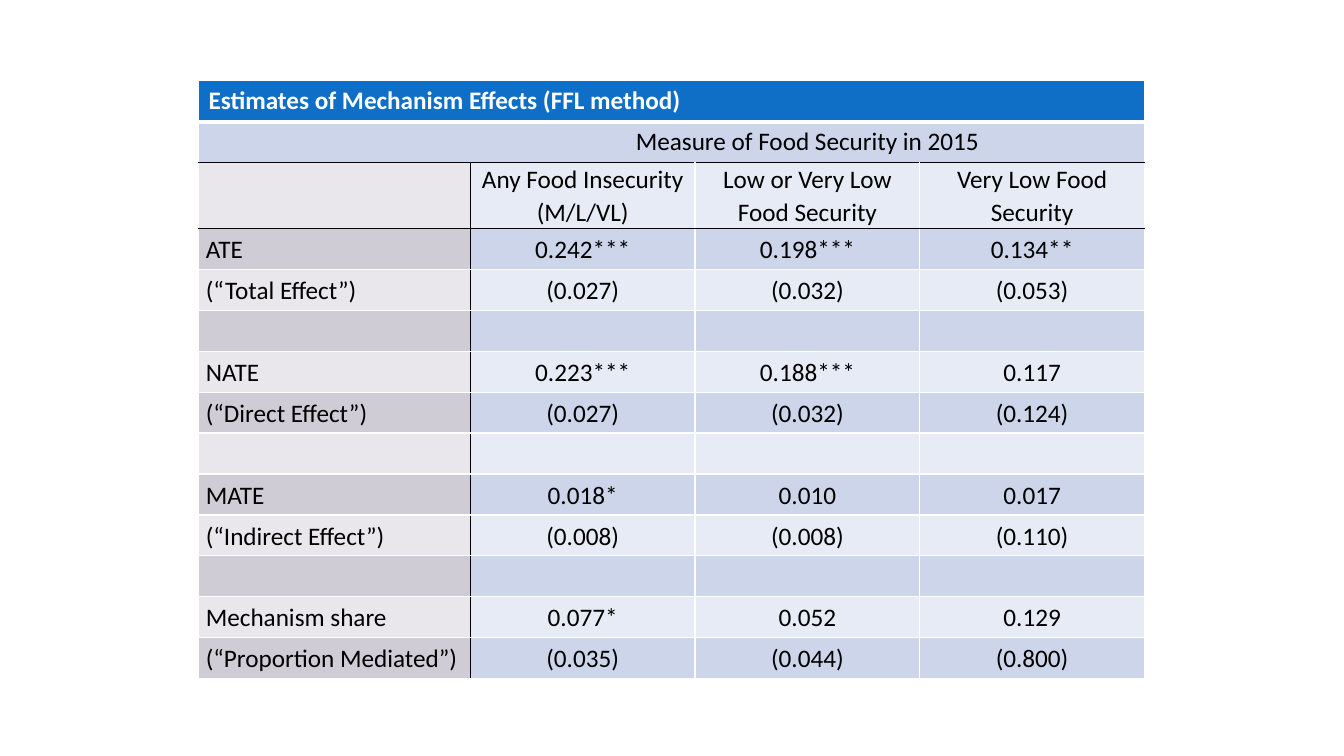
from lxml import etree
from pptx import Presentation
from pptx.dml.color import RGBColor
from pptx.enum.text import MSO_ANCHOR, PP_ALIGN
from pptx.oxml.ns import qn
from pptx.util import Pt

TITLE = "Estimates of Mechanism Effects (FFL method)"
ROWS = [
    (TITLE, "", "", ""),
    ("", "Measure of Food Security in 2015", "", ""),
    ("", "Any Food Insecurity\v(M/L/VL)", "Low or Very Low Food Security",
     "Very Low Food Security"),
    ("ATE", "0.242***", "0.198***", "0.134**"),
    ("(“Total Effect”)", "(0.027)", "(0.032)", "(0.053)"),
    ("", "", "", ""),
    ("NATE", "0.223***", "0.188***", "0.117"),
    ("(“Direct Effect”)", "(0.027)", "(0.032)", "(0.124)"),
    ("", "", "", ""),
    ("MATE", "0.018*", "0.010", "0.017"),
    ("(“Indirect Effect”)", "(0.008)", "(0.008)", "(0.110)"),
    ("", "", "", ""),
    ("Mechanism share", "0.077*", "0.052", "0.129"),
    ("(“Proportion Mediated”)", "(0.035)", "(0.044)", "(0.800)"),
]
TITLE_ROW, MEASURE_ROW, HEADER_ROW = 0, 1, 2

# Lengths in px
PX = 9525
SLIDE_WIDTH, SLIDE_HEIGHT = 1280, 720
LEFT, TOP = 189, 77
COLUMN_WIDTHS = [259, 214, 214, 214]
ROW_HEIGHT, HEADER_HEIGHT = 39, 62
SIDE_MARGIN = 7

FONT = "Calibri"
WHITE = RGBColor(0xFF, 0xFF, 0xFF)
BLACK = RGBColor(0x00, 0x00, 0x00)
TITLE_BLUE = RGBColor(0x0F, 0x6F, 0xC6)
VALUE_BANDS = [RGBColor(0xE7, 0xEB, 0xF5), RGBColor(0xCC, 0xD5, 0xEA)]
LABEL_BANDS = [RGBColor(0xE9, 0xE7, 0xEC), RGBColor(0xD0, 0xCC, 0xD6)]
CENTER = PP_ALIGN.CENTER
TOP_ANCHOR, MIDDLE, BOTTOM = MSO_ANCHOR.TOP, MSO_ANCHOR.MIDDLE, MSO_ANCHOR.BOTTOM


def fill_color(row, column):
    if row == TITLE_ROW:
        return TITLE_BLUE
    bands = LABEL_BANDS if column == 0 and row >= HEADER_ROW else VALUE_BANDS
    return bands[row % 2]


def rule_below(row):
    """Colour and width of the line under a row."""
    if row == TITLE_ROW:
        return WHITE, 3
    return (BLACK if row in (MEASURE_ROW, HEADER_ROW) else WHITE), 1


def rule_right(row, column):
    """Colour and width of the line right of a column."""
    if row == MEASURE_ROW and column == 0:
        return None, 0
    return (BLACK if column == 0 and row >= HEADER_ROW else WHITE), 1


def set_borders(cell, row, column):
    rules = {
        "a:lnL": rule_right(row, column - 1),
        "a:lnR": rule_right(row, column),
        "a:lnT": rule_below(row - 1),
        "a:lnB": rule_below(row),
    }
    properties = cell._tc.get_or_add_tcPr()
    for tag, (color, width) in rules.items():
        line = etree.SubElement(properties, qn(tag), w=str(Pt(width)))
        if color is None:
            etree.SubElement(line, qn("a:noFill"))
        else:
            solid = etree.SubElement(line, qn("a:solidFill"))
            etree.SubElement(solid, qn("a:srgbClr"), val=str(color))


def set_text(cell, text, row, column):
    cell.text_frame.text = text
    paragraph = cell.text_frame.paragraphs[0]
    if column > 0:
        paragraph.alignment = CENTER
    cell.vertical_anchor = {TITLE_ROW: TOP_ANCHOR, HEADER_ROW: BOTTOM}.get(row, MIDDLE)
    if row >= HEADER_ROW:
        paragraph.line_spacing = 1.07
        cell.margin_left = cell.margin_right = SIDE_MARGIN * PX
        cell.margin_top = cell.margin_bottom = 0
    for run in paragraph.runs:
        run.font.name = FONT
        run.font.size = Pt(18)
        run.font.bold = row == TITLE_ROW
        run.font.color.rgb = WHITE if row == TITLE_ROW else BLACK


presentation = Presentation()
presentation.slide_width = SLIDE_WIDTH * PX
presentation.slide_height = SLIDE_HEIGHT * PX
slide = presentation.slides.add_slide(presentation.slide_layouts[6])

# Table grid
row_heights = [HEADER_HEIGHT if row == HEADER_ROW else ROW_HEIGHT
               for row in range(len(ROWS))]
table = slide.shapes.add_table(
    len(ROWS), len(COLUMN_WIDTHS), LEFT * PX, TOP * PX,
    sum(COLUMN_WIDTHS) * PX, sum(row_heights) * PX).table
table.first_row = table.horz_banding = False
for table_column, width in zip(table.columns, COLUMN_WIDTHS):
    table_column.width = width * PX
for table_row, height in zip(table.rows, row_heights):
    table_row.height = height * PX
table.cell(TITLE_ROW, 0).merge(table.cell(TITLE_ROW, 3))
table.cell(MEASURE_ROW, 1).merge(table.cell(MEASURE_ROW, 3))

# Cells
for row, texts in enumerate(ROWS):
    for column, text in enumerate(texts):
        cell = table.cell(row, column)
        if cell.is_spanned:
            continue
        set_borders(cell, row, column)
        cell.fill.solid()
        cell.fill.fore_color.rgb = fill_color(row, column)
        if text:
            set_text(cell, text, row, column)

presentation.save("out.pptx")
